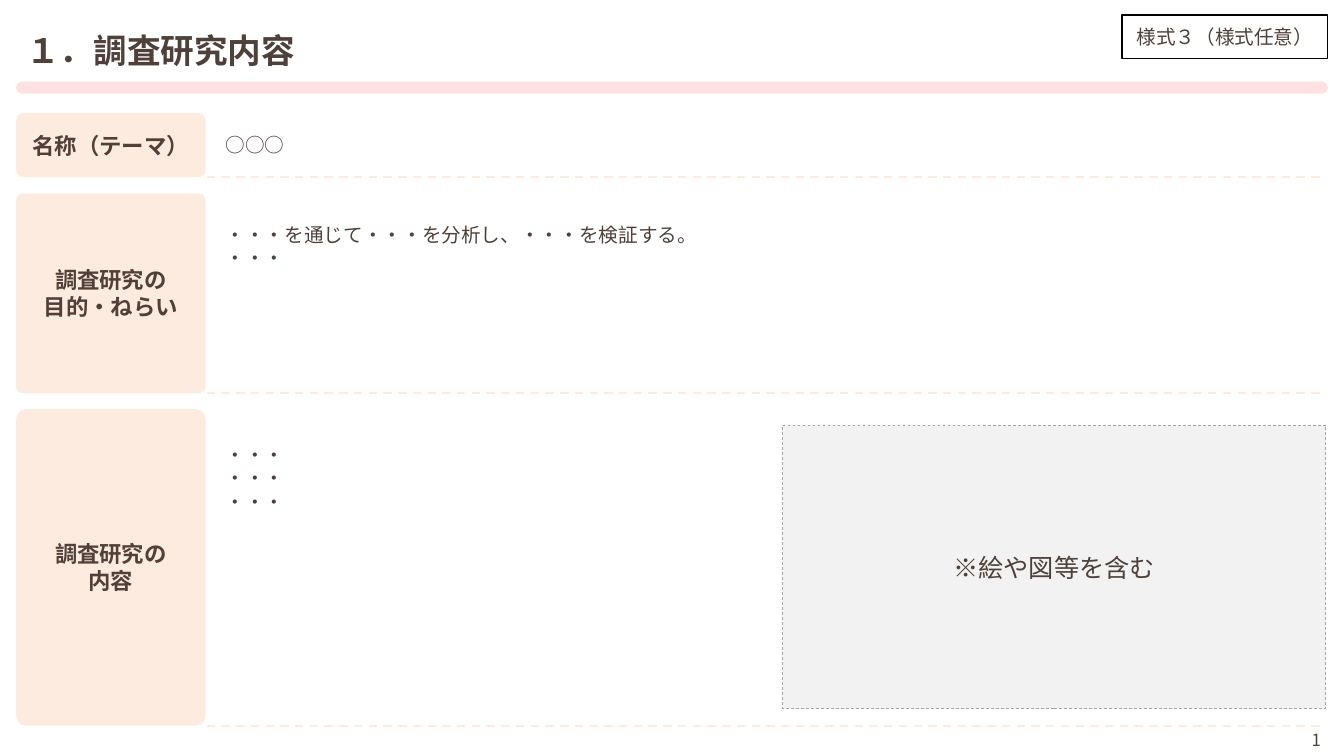
"""Build the research outline form slide."""
from dataclasses import dataclass

from lxml.etree import SubElement
from pptx import Presentation
from pptx.dml.color import RGBColor
from pptx.enum.dml import MSO_LINE
from pptx.enum.shapes import MSO_CONNECTOR, MSO_SHAPE
from pptx.enum.text import MSO_ANCHOR as ANCHOR, PP_ALIGN as ALIGN
from pptx.oxml.ns import qn
from pptx.util import Inches, Pt


@dataclass(frozen=True)
class Theme:
    """Colours and type sizes of the slide."""
    font: str = "Noto Sans CJK JP"
    ink: str = "4F4039"
    white: str = "FFFFFF"
    black: str = "000000"
    bar: str = "FFE1E2"
    label: str = "FEEBDF"
    figure: str = "F2F2F2"
    figure_edge: str = "A6A6A6"
    title_size: int = 24
    figure_size: int = 18
    label_size: int = 16
    body_size: int = 14
    number_size: int = 12
    leading: float = 1.2


THEME = Theme()
LEFT, RIGHT, ROW_TOP, ROW_GAP = 0.16, 13.17, 1.12, 0.16
LABEL_WIDTH, BODY_LEFT = 1.88, 2.14
RULE_LEFT, RULE_RIGHT = 2.05, 13.15

ROWS = [
    (0.64, 0.64, 0.12, ["名称（テーマ）"], ["○○○"], None),
    (1.98, 1.98, 0.035, ["調査研究の", "目的・ねらい"],
     ["・・・を通じて・・・を分析し、・・・を検証する。", "・・・"], 0.29),
    (3.14, 3.23, 0.052, ["調査研究の", "内容"], ["・・・"] * 3, 0.33),
]


def write(holder, lines, size, align=ALIGN.LEFT, bold=False, top_inset=None):
    """Write lines into a shape, centred vertically unless a top inset is given."""
    frame = holder.text_frame
    frame.word_wrap = True
    frame.vertical_anchor = ANCHOR.MIDDLE
    if top_inset is not None:
        frame.vertical_anchor = ANCHOR.TOP
        frame.margin_top = Inches(top_inset)
    for index, line in enumerate(lines):
        paragraph = frame.add_paragraph() if index else frame.paragraphs[0]
        paragraph.alignment = align
        paragraph.line_spacing = Pt(size * THEME.leading)
        run = paragraph.add_run()
        run.text = line
        run.font.size = Pt(size)
        run.font.bold = bold
        run.font.name = THEME.font
        run.font.color.rgb = RGBColor.from_string(THEME.ink)
        SubElement(run.font._element, qn("a:ea")).set("typeface", THEME.font)
    return frame


def add_panel(slide, box, fill=None, edge=None, edge_width=1, dash=None, corner=None):
    """Add a rectangle, rounded when a corner ratio is given."""
    kind = MSO_SHAPE.RECTANGLE if corner is None else MSO_SHAPE.ROUNDED_RECTANGLE
    panel = slide.shapes.add_shape(kind, *map(Inches, box))
    panel.shadow.inherit = False
    if corner is not None:
        panel.adjustments[0] = corner
    if fill:
        panel.fill.solid()
        panel.fill.fore_color.rgb = RGBColor.from_string(fill)
    else:
        panel.fill.background()
    if edge:
        panel.line.color.rgb = RGBColor.from_string(edge)
        panel.line.width = Pt(edge_width)
        panel.line.dash_style = dash
    else:
        panel.line.fill.background()
    return panel


def add_rule(slide, y):
    """Add the dashed rule that closes a row."""
    rule = slide.shapes.add_connector(
        MSO_CONNECTOR.STRAIGHT, Inches(RULE_LEFT), Inches(y), Inches(RULE_RIGHT), Inches(y))
    rule.line.color.rgb = RGBColor.from_string(THEME.label)
    rule.line.width = Pt(1.5)
    rule.line.dash_style = MSO_LINE.DASH
    SubElement(rule._element.spPr, qn("a:effectLst"))


def add_header(slide):
    """Add the form tag, the page number, the title and its bar."""
    tag = add_panel(slide, (11.13, 0.15, 2.04, 0.43), THEME.white, THEME.black)
    tag_text = write(tag, ["様式３（様式任意）"], THEME.body_size, ALIGN.CENTER)
    tag_text.paragraphs[0].space_after = Pt(6)
    number = slide.shapes.add_textbox(*map(Inches, (10.2, 7.14, 3, 0.4)))
    write(number, ["1"], THEME.number_size, ALIGN.RIGHT)
    add_panel(slide, (LEFT, 0.81, RIGHT - LEFT, 0.12), THEME.bar, corner=0.5)
    title = slide.shapes.add_textbox(*map(Inches, (LEFT, 0.18, RIGHT - LEFT, 0.63)))
    heading = write(title, ["１．調査研究内容"], THEME.title_size, bold=True)
    heading.margin_left = heading.margin_right = 0
    heading.margin_top = heading.margin_bottom = 0
    heading.paragraphs[0]._p.get_or_add_pPr().set("indent", str(Inches(0.1)))


def add_row(slide, top, height, body_height, corner, label_lines, body_lines, body_inset):
    """Add one form row: label, closing rule and body text."""
    label = add_panel(slide, (LEFT, top, LABEL_WIDTH, height), THEME.label, corner=corner)
    write(label, label_lines, THEME.label_size, ALIGN.CENTER, bold=True)
    add_rule(slide, top + height)
    body = add_panel(slide, (BODY_LEFT, top, RIGHT - BODY_LEFT, body_height), corner=0)
    write(body, body_lines, THEME.body_size, top_inset=body_inset)


def main():
    """Build and save the slide."""
    deck = Presentation()
    deck.slide_width, deck.slide_height = Inches(13.33), Inches(7.5)
    slide = deck.slides.add_slide(deck.slide_layouts[6])
    add_header(slide)
    top = ROW_TOP
    for row in ROWS:
        add_row(slide, top, *row)
        top += row[0] + ROW_GAP
    figure = add_panel(slide, (7.76, 4.22, 5.39, 2.81), THEME.figure,
                       THEME.figure_edge, 0.5, MSO_LINE.DASH)
    write(figure, ["※絵や図等を含む"], THEME.figure_size, ALIGN.CENTER)
    deck.save("out.pptx")


if __name__ == "__main__":
    main()
